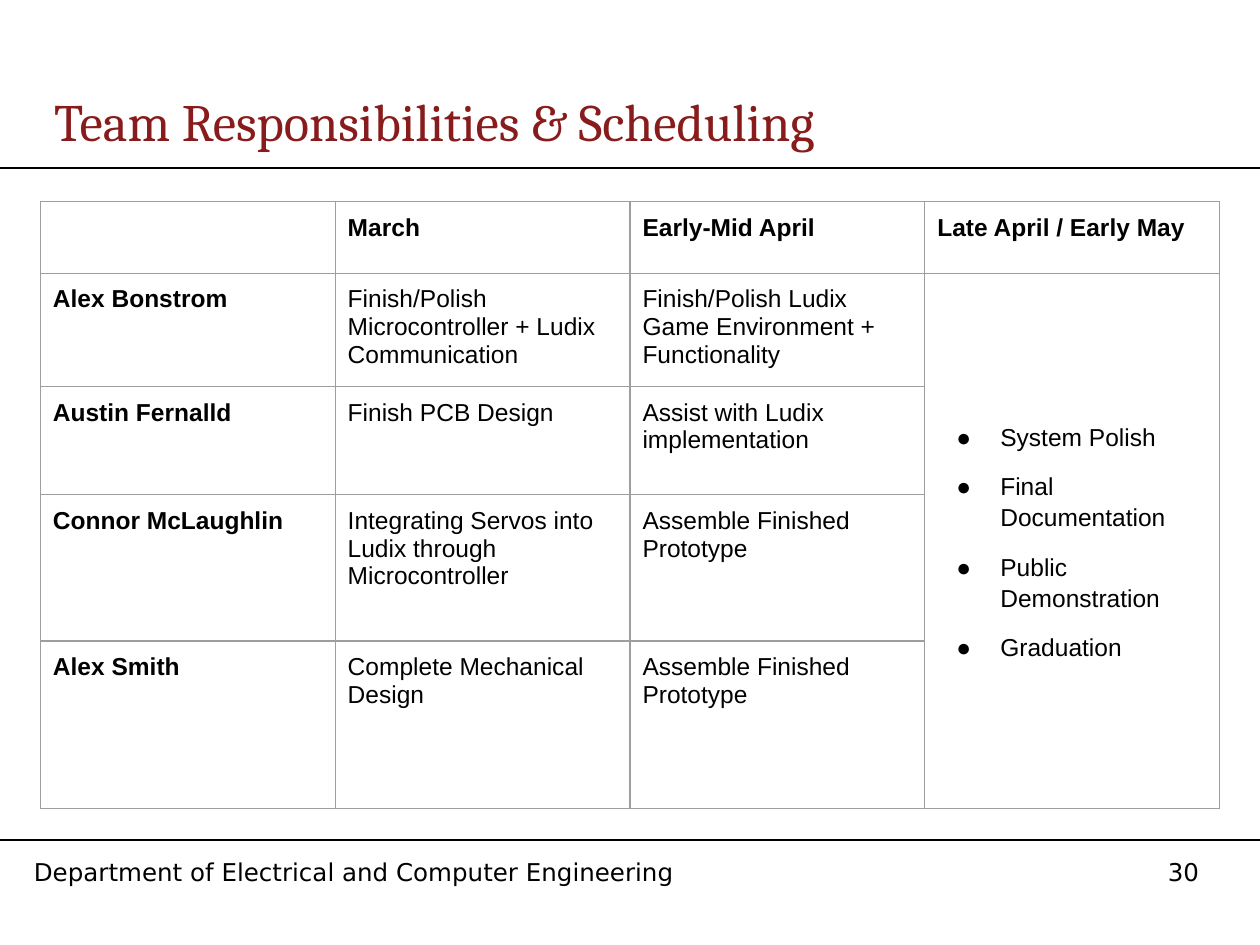
"""Build the team responsibilities and scheduling slide."""
import lxml.etree
import pptx
import pptx.dml.color
import pptx.enum.shapes
import pptx.enum.text
import pptx.oxml.ns
import pptx.util

BLACK = pptx.dml.color.RGBColor(0x00, 0x00, 0x00)
MAROON = pptx.dml.color.RGBColor(0x88, 0x1C, 0x1C)
GREY = pptx.dml.color.RGBColor(0x9E, 0x9E, 0x9E)

HEADS = ["", "March", "Early-Mid April", "Late April / Early May"]
TASKS = [
    ["Alex Bonstrom", "Finish/Polish Microcontroller + Ludix Communication",
     "Finish/Polish Ludix Game Environment + Functionality"],
    ["Austin Fernalld", "Finish PCB Design", "Assist with Ludix implementation"],
    ["Connor McLaughlin", "Integrating Servos into Ludix through Microcontroller",
     "Assemble Finished Prototype"],
    ["Alex Smith", "Complete Mechanical Design", "Assemble Finished Prototype"],
]
GOALS = ["System Polish", "Final Documentation", "Public Demonstration", "Graduation"]
ROWS = [0.57, 0.86, 0.86, 1.16, 1.33]


def node(root, tag, **attrs):
    """Add a drawing element to root and return it."""
    return lxml.etree.SubElement(root, pptx.oxml.ns.qn(tag), attrs)


def dot(para):
    """Give a paragraph a round bullet with a hanging indent."""
    props = para._p.get_or_add_pPr()
    props.set("marL", str(pptx.util.Inches(0.5)))
    props.set("indent", str(pptx.util.Inches(-0.35)))
    node(node(props, "a:buClr"), "a:srgbClr", val=str(BLACK))
    node(props, "a:buFont", typeface="Arial")
    node(props, "a:buChar", char="●")


def write(frame, text, size=14, font="Arial", color=BLACK, bold=False,
          bullet=False, lead=None, gap=0):
    """Fill a text frame with one paragraph for each line of text."""
    for i, line in enumerate(text.split("\n")):
        para = frame.add_paragraph() if i else frame.paragraphs[0]
        if bullet:
            dot(para)
        para.alignment = pptx.enum.text.PP_ALIGN.LEFT
        para.space_before = pptx.util.Pt(gap if i else 0)
        if lead:
            para.line_spacing = lead
        run = para.add_run()
        run.text = line
        run.font.size = pptx.util.Pt(size)
        run.font.name = font
        run.font.bold = bold
        run.font.color.rgb = color


class Deck:
    """Hold the style and the current slide."""

    def __init__(self, wide=10, high=7.5):
        """Start a deck with one title-only slide."""
        self.file = pptx.Presentation()
        self.wide = self.file.slide_width = pptx.util.Inches(wide)
        self.high = self.file.slide_height = pptx.util.Inches(high)
        self.slide = self.file.slides.add_slide(self.file.slide_layouts[5])

    def span(self, x, y, w, h):
        """Turn shares of the slide into lengths."""
        return (int(x * self.wide), int(y * self.high),
                int(w * self.wide), int(h * self.high))

    def title(self, text, *box):
        """Place and fill the title."""
        shape = self.slide.shapes.title
        shape.left, shape.top, shape.width, shape.height = self.span(*box)
        frame = shape.text_frame
        frame.auto_size = pptx.enum.text.MSO_AUTO_SIZE.NONE
        frame.vertical_anchor = pptx.enum.text.MSO_ANCHOR.MIDDLE
        frame.margin_top = frame.margin_bottom = pptx.util.Inches(0.1)
        write(frame, text, size=30, font="Cambria", color=MAROON)

    def label(self, text, *box):
        """Add a footer text box."""
        frame = self.slide.shapes.add_textbox(*self.span(*box)).text_frame
        frame.word_wrap = True
        write(frame, text, font="DejaVu Sans")

    def rule(self, y):
        """Draw a line across the whole slide."""
        left, top, right, end = self.span(0, y, 1, y)
        line = self.slide.shapes.add_connector(
            pptx.enum.shapes.MSO_CONNECTOR.STRAIGHT, left, top, right, end)
        line.line.color.rgb = BLACK
        line.line.width = pptx.util.Pt(1)
        node(line._element.spPr, "a:effectLst")

    def cell(self, cell):
        """Give a table cell its margins, border and empty fill."""
        cell.margin_left = cell.margin_right = pptx.util.Inches(0.1)
        cell.margin_top = cell.margin_bottom = pptx.util.Inches(0.1)
        props = cell._tc.get_or_add_tcPr()
        for side in ("L", "R", "T", "B"):
            edge = node(props, f"a:ln{side}", w=str(pptx.util.Pt(0.75)))
            node(node(edge, "a:solidFill"), "a:srgbClr", val=str(GREY))
        cell.fill.background()

    def table(self, heads, tasks, goals, rows, *box):
        """Add the schedule, with the goals in one tall last cell."""
        grid = self.slide.shapes.add_table(
            len(rows), len(heads), *self.span(*box)).table
        for row, high in zip(grid.rows, rows):
            row.height = pptx.util.Inches(high)
        for item in grid.iter_cells():
            self.cell(item)
        for r, line in enumerate([heads] + tasks):
            for c, text in enumerate(line):
                if text:
                    write(grid.cell(r, c).text_frame, text, bold=r == 0 or c == 0)
        last = len(heads) - 1
        tall = grid.cell(1, last)
        tall.merge(grid.cell(len(rows) - 1, last))
        tall.vertical_anchor = pptx.enum.text.MSO_ANCHOR.MIDDLE
        write(tall.text_frame, "\n".join(goals), bullet=True, lead=1.15, gap=10)


def main():
    """Build and save the slide."""
    deck = Deck()
    deck.rule(0.178)
    deck.label("30", 0.917, 0.9, 0.067, 0.045)
    deck.label("Department of Electrical and Computer Engineering",
               0.017, 0.9, 0.565, 0.045)
    deck.rule(0.889)
    deck.title("Team Responsibilities & Scheduling", 0.033, 0.089, 0.967, 0.078)
    deck.table(HEADS, TASKS, GOALS, ROWS, 0.032, 0.213, 0.936, 0.637)
    deck.file.save("out.pptx")


if __name__ == "__main__":
    main()
